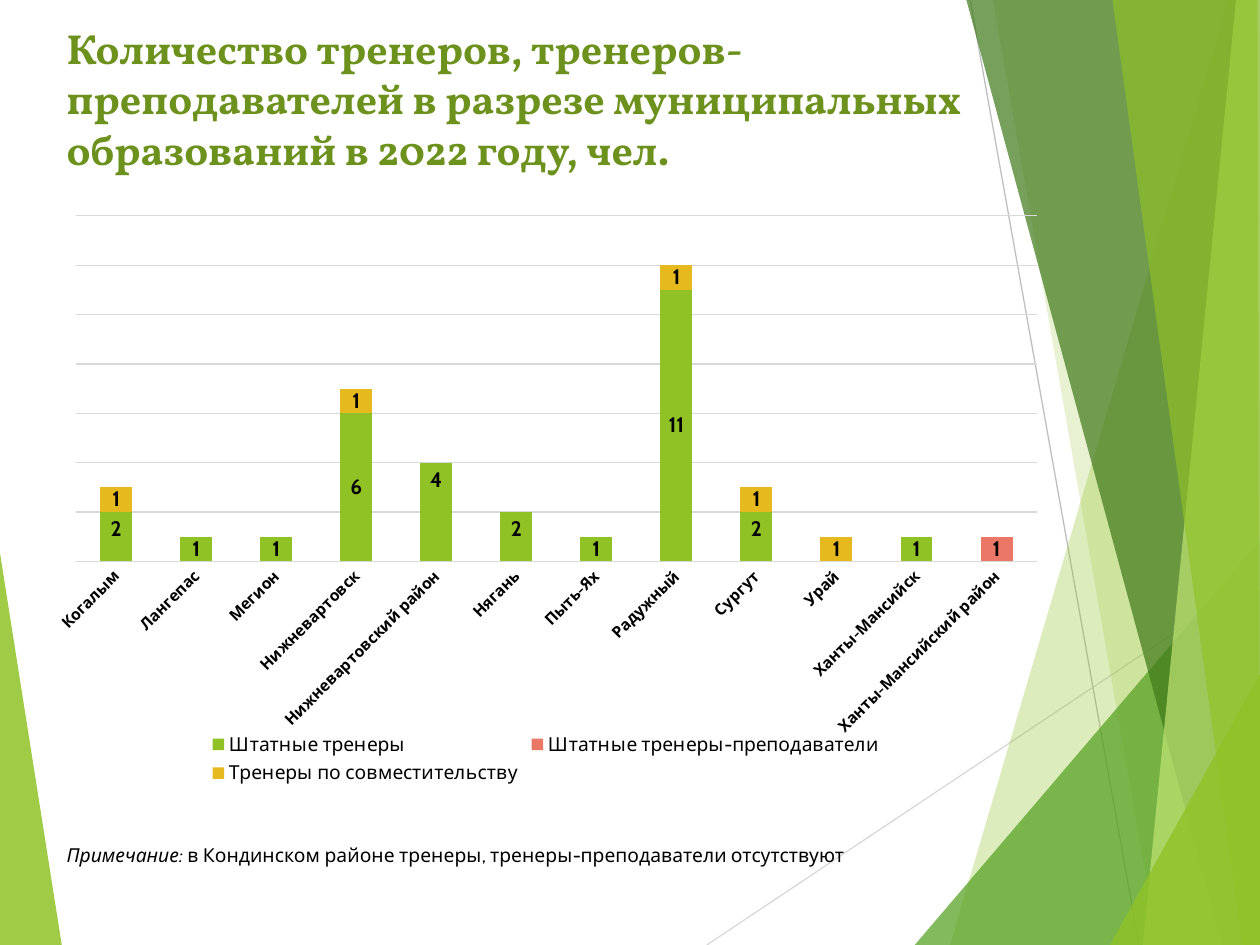
from lxml import etree
from pptx import Presentation
from pptx.chart.data import CategoryChartData
from pptx.dml.color import RGBColor
from pptx.enum.chart import XL_CHART_TYPE, XL_LABEL_POSITION, XL_LEGEND_POSITION, XL_TICK_MARK
from pptx.enum.shapes import MSO_CONNECTOR
from pptx.oxml import parse_xml
from pptx.oxml.ns import nsdecls, qn
from pptx.util import Inches, Pt

STACKED = XL_CHART_TYPE.COLUMN_STACKED
CENTER = XL_LABEL_POSITION.CENTER
INSIDE_END = XL_LABEL_POSITION.INSIDE_END
BOTTOM = XL_LEGEND_POSITION.BOTTOM
NO_TICKS = XL_TICK_MARK.NONE
STRAIGHT = MSO_CONNECTOR.STRAIGHT

GREEN, CORAL, GOLD = "90C226", "EB7766", "E6B91E"
GRID, BLACK = "D9D9D9", "000000"


def rgb(value):
    return RGBColor.from_string(value)


def style_font(font, size, color=BLACK, bold=False, name="Cabin"):
    font.size, font.bold, font.name = Pt(size), bold, name
    font.color.rgb = rgb(color)


prs = Presentation()
prs.slide_width, prs.slide_height = Inches(10), Inches(7.5)
slide = prs.slides.add_slide(prs.slide_layouts[6])
shapes = slide.shapes

# Decorative background: thin lines between translucent green facets
left_facet = ([(0, 4.39), (0.49, 7.5), (0, 7.5)], GREEN, 85)
right_facets = [
    ([(9.75, 0), (7.54, 7.5), (10, 7.5), (10, 0)], GREEN, 30),
    ([(7.88, 0), (9.19, 7.5), (10, 7.5), (10, 0)], GREEN, 20),
    ([(7.26, 7.5), (10, 4.29), (10, 7.5)], "54A021", 72),
    ([(7.67, 0), (9.7, 7.5), (10, 7.5), (10, 0)], "3F7819", 70),
    ([(9.81, 0), (9.07, 7.5), (10, 7.5), (10, 0)], "C0E474", 70),
    ([(8.83, 0), (9.86, 7.5), (10, 7.5), (9.98, 0)], GREEN, 65),
    ([(8.81, 7.5), (10, 5.35), (10, 7.5)], GREEN, 80),
]
rays = [((5.61, 7.5), (10, 4.57), GRID), ((7.7, 0), (9.04, 7.5), "BFBFBF")]

for start, end, color in rays:
    ray = shapes.add_connector(STRAIGHT, *map(Inches, start + end))
    ray.line.color.rgb = rgb(color)
    ray.line.width = Pt(0.75)
    etree.SubElement(ray._element.spPr, qn("a:effectLst"))

for corners, color, opacity in [left_facet] + right_facets:
    points = [(Inches(x), Inches(y)) for x, y in corners]
    outline = shapes.build_freeform(*points[0])
    outline.add_line_segments(points[1:], close=True)
    facet = outline.convert_to_shape()
    facet.shadow.inherit = False
    facet.line.fill.background()
    facet.fill.solid()
    facet.fill.fore_color.rgb = rgb(color)
    fill_color = facet._element.spPr.find(qn("a:solidFill"))[0]
    etree.SubElement(fill_color, qn("a:alpha"), val=str(opacity * 1000))

# Title
title = shapes.add_textbox(Inches(0.43), Inches(0.13), Inches(7.8), Inches(1.25)).text_frame
title.word_wrap = True
heading = title.paragraphs[0].add_run()
heading.text = ("Количество тренеров, тренеров-преподавателей в разрезе "
                "муниципальных образований в 2022 году, чел.")
style_font(heading.font, 24, "6C921D", True, "Vollkorn")

# Coaches by municipality: staff coaches, staff coach-teachers, part-time coaches
municipalities = [
    ("Когалым", 2, None, 1),
    ("Лангепас", 1, None, None),
    ("Мегион", 1, None, None),
    ("Нижневартовск", 6, None, 1),
    ("Нижневартовский район", 4, None, None),
    ("Нягань", 2, None, None),
    ("Пыть-Ях", 1, None, None),
    ("Радужный", 11, None, 1),
    ("Сургут", 2, None, 1),
    ("Урай", None, None, 1),
    ("Ханты-Мансийск", 1, None, None),
    ("Ханты-Мансийский район", None, 1, None),
]
names, *counts = zip(*municipalities)
coach_types = [
    ("Штатные тренеры", GREEN, INSIDE_END),
    ("Штатные тренеры-преподаватели", CORAL, CENTER),
    ("Тренеры по совместительству", GOLD, CENTER),
]
data = CategoryChartData()
data.categories = names
for (coach_type, _, _), values in zip(coach_types, counts):
    data.add_series(coach_type, values)

chart = shapes.add_chart(STACKED, Inches(0.28), Inches(1.62), Inches(8.11), Inches(4.65), data).chart
style_font(chart.font, 10)
chart.has_title = False
chart.has_legend = True
chart.legend.position = BOTTOM
chart.legend.include_in_layout = False
style_font(chart.legend.font, 11)

plot = chart.plots[0]
plot.gap_width, plot.overlap = 150, 100
plot.vary_by_categories = False
for series, (_, color, position) in zip(plot.series, coach_types):
    series.format.fill.solid()
    series.format.fill.fore_color.rgb = rgb(color)
    labels = series.data_labels
    labels.show_value = True
    labels.position = position
    style_font(labels.font, 12, bold=True)

# The shortest and the tallest staff columns carry their value in the middle
staff = plot.series[0]
for index, value in enumerate(counts[0]):
    if value in (1, 6, 11):
        label = staff.points[index].data_label
        style_font(label.font, 12, bold=True)
        label.position = CENTER

category_axis = chart.category_axis
category_axis.major_tick_mark = category_axis.minor_tick_mark = NO_TICKS
style_font(category_axis.tick_labels.font, 9, bold=True)
category_axis._element.find(qn("c:txPr")).find(qn("a:bodyPr")).set("rot", "-2700000")

value_axis = chart.value_axis
value_axis.visible = False
value_axis.minimum_scale, value_axis.maximum_scale = 0, 14
value_axis.major_unit = 2
value_axis.has_major_gridlines = True
for line in (category_axis.format.line, value_axis.major_gridlines.format.line):
    line.color.rgb = rgb(GRID)
    line.width = Pt(0.75)

# Fixed plot area leaves room for the slanted names
plot_area = chart._chartSpace.chart.plotArea
for old_layout in plot_area.findall(qn("c:layout")):
    plot_area.remove(old_layout)
plot_area.insert(0, parse_xml(
    f'<c:layout {nsdecls("c")}><c:manualLayout><c:layoutTarget val="inner"/>'
    '<c:xMode val="edge"/><c:yMode val="edge"/><c:x val="0.04"/><c:y val="0.02"/>'
    '<c:w val="0.94"/><c:h val="0.59"/></c:manualLayout></c:layout>'))

# Footnote
note = shapes.add_textbox(Inches(0.43), Inches(6.64), Inches(7.09), Inches(0.29)).text_frame
note.word_wrap = True
for text, italic in [("Примечание:", True),
                     (" в Кондинском районе тренеры, тренеры-преподаватели отсутствуют", False)]:
    run = note.paragraphs[0].add_run()
    run.text = text
    style_font(run.font, 11)
    run.font.italic = italic

prs.save("out.pptx")
